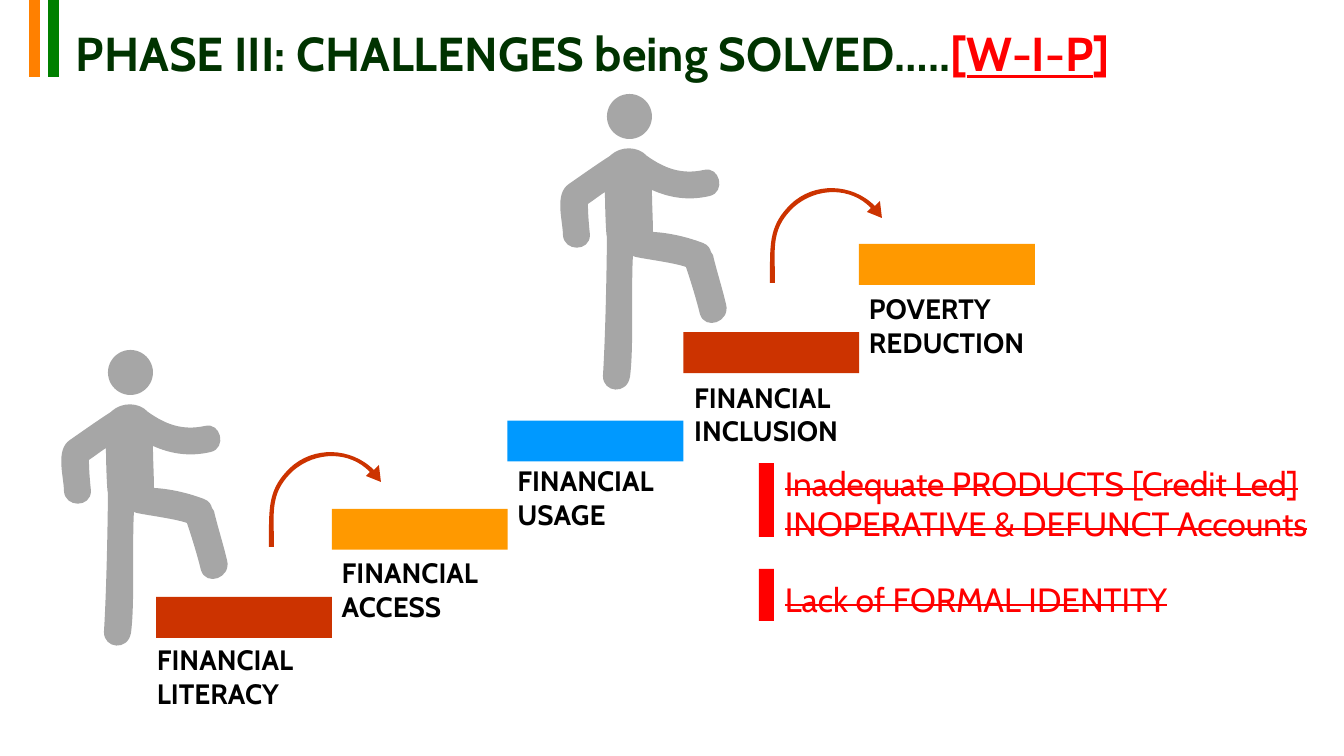
from dataclasses import dataclass

from lxml import etree
from pptx import Presentation
from pptx.dml.color import RGBColor
from pptx.enum.shapes import MSO_SHAPE
from pptx.enum.text import MSO_ANCHOR, MSO_AUTO_SIZE
from pptx.oxml.ns import qn
from pptx.util import Pt

PX = 914400 / 100.8
RECTANGLE, OVAL = MSO_SHAPE.RECTANGLE, MSO_SHAPE.OVAL
MIDDLE = MSO_ANCHOR.MIDDLE
FIT_SHAPE = MSO_AUTO_SIZE.SHAPE_TO_FIT_TEXT


@dataclass(frozen=True)
class Theme:
    font: str = "Cabin"
    title_size: int = 34
    barrier_size: int = 24
    label_size: int = 20
    title: str = "003300"
    label: str = "000000"
    alert: str = "FF0000"
    saffron: str = "FF8000"
    green: str = "008000"
    brick: str = "CC3300"
    amber: str = "FF9900"
    blue: str = "0099FF"
    walker: str = "A6A6A6"


THEME = Theme()

STEP_SIZE = (176, 41)
# label, colour, label offset from the bottom left of the step
STEPS = [
    ("FINANCIAL LITERACY", THEME.brick, -9, 0),
    ("FINANCIAL ACCESS", THEME.amber, 0, 1),
    ("FINANCIAL USAGE", THEME.blue, 0, -3),
    ("FINANCIAL INCLUSION", THEME.brick, 1, 2),
    ("POVERTY REDUCTION", THEME.amber, 0, 2),
]

# Outlines: two numbers are a line end, six are a cubic curve
WALKER_BODY = [
    (71, 290),
    (75, 261, 72, 202, 74, 169),
    (76, 171, 113, 175, 127, 180),
    (132, 195, 137, 211, 141, 227),
    (146, 244, 172, 235, 167, 217),
    (163, 200, 158, 185, 154, 168),
    (153, 167, 153, 166, 152, 165),
    (151, 161, 149, 158, 144, 156),
    (128, 150, 111, 146, 94, 145),
    (94, 131, 93, 117, 93, 103),
    (111, 111, 130, 114, 151, 109),
    (167, 105, 161, 79, 145, 83),
    (122, 88, 105, 81, 88, 69),
    (79, 59, 62, 59, 52, 68),
    (52, 68, 52, 69, 51, 69),
    (37, 78, 23, 88, 10, 97),
    (-5, 107, 4, 134, 4, 148),
    (5, 165, 31, 165, 31, 148),
    (30, 138, 29, 127, 29, 117),
    (35, 113, 40, 109, 46, 105),
    (46, 118, 47, 149, 48, 150),
    (48, 160, 47, 241, 44, 289),
    (44, 306, 68, 308, 71, 290),
]
LEAP_ARROW = [
    (112, 36),
    (110, 19),
    (105, 24),
    (82, 1, 44, 0, 21, 22),
    (0, 42, 0, 60, 0, 90),
    (0, 101),
    (5, 101),
    (5, 90),
    (4, 60, 4, 44, 24, 25),
    (47, 5, 81, 5, 101, 26),
    (97, 30),
]


def emu(*lengths):
    return [round(length * PX) for length in lengths]


def paint(shape, color):
    shape.shadow.inherit = False
    shape.fill.solid()
    shape.fill.fore_color.rgb = RGBColor.from_string(color)
    shape.line.fill.background()


def add_block(shapes, box, color, kind=RECTANGLE):
    paint(shapes.add_shape(kind, *emu(*box)), color)


def add_outline(shapes, left, top, outline, color):
    points = [
        emu(left + x, top + y)
        for segment in outline
        for x, y in zip(segment[::2], segment[1::2])
    ]
    builder = shapes.build_freeform(*points[0], scale=1.0)
    builder.add_line_segments(points[1:], close=True)
    shape = builder.convert_to_shape()
    # Join each three points of a curve into one cubic segment
    lines = iter(list(shape._element.iter(qn("a:lnTo"))))
    for segment in outline[1:]:
        line = next(lines)
        if len(segment) == 6:
            curve = etree.Element(qn("a:cubicBezTo"))
            line.addprevious(curve)
            for part in (line, next(lines), next(lines)):
                curve.append(part[0])
                part.getparent().remove(part)
    paint(shape, color)


def add_text(page, box, paragraphs, size, frame_values, spacing=None, strike=False):
    """Each paragraph is a list of (text, colour, font values)."""
    frame = page.shapes.add_textbox(*emu(*box)).text_frame
    for name, value in {"word_wrap": True, **frame_values}.items():
        setattr(frame, name, value)
    for index, spans in enumerate(paragraphs):
        para = frame.paragraphs[0] if index == 0 else frame.add_paragraph()
        para.line_spacing = spacing
        for text, color, values in spans:
            span = para.add_run()
            span.text = text
            span.font.color.rgb = RGBColor.from_string(color)
            for name, value in {"name": THEME.font, "size": Pt(size), **values}.items():
                setattr(span.font, name, value)
            if strike:
                span.font._element.set("strike", "sngStrike")


def add_header(page, left, top, width, height):
    # Flag stripes
    for offset, color in ((0, THEME.saffron), (19, THEME.green)):
        add_block(page.shapes, (left + offset, top, 11, height), color)
    # Title
    bold = {"bold": True}
    spans = [
        ("PHASE III: CHALLENGES being SOLVED…..", THEME.title, bold),
        ("[", THEME.alert, bold),
        ("W-I-P", THEME.alert, {"bold": True, "underline": True}),
        ("]", THEME.alert, bold),
    ]
    box = (left + 37, top + 29, width - 37, 55)
    add_text(page, box, [spans], THEME.title_size, {"vertical_anchor": MIDDLE}, 0.9)


def add_staircase(page, left, top, run, rise):
    """Climb evenly from the lowest step at left, top over run and rise."""
    width, height = STEP_SIZE
    gaps = len(STEPS) - 1
    for index, (label, color, shift_x, shift_y) in enumerate(STEPS):
        x, y = left + index * run / gaps, top - index * rise / gaps
        add_block(page.shapes, (x, y, width, height), color)
        box = (x + shift_x, y + height + shift_y, 215, 78)
        spans = [(label, THEME.label, {"bold": True})]
        add_text(page, box, [spans], THEME.label_size, {"auto_size": FIT_SHAPE})


def add_walker(page, left, top):
    shapes = page.shapes.add_group_shape().shapes
    add_block(shapes, (left + 48, top + 7, 45, 45), THEME.walker, OVAL)
    add_outline(shapes, left, top, WALKER_BODY, THEME.walker)


def add_barrier(page, left, top, width, height, lines, text_offset):
    add_block(page.shapes, (left, top, 15, height), THEME.alert)
    paragraphs = [[(line, THEME.alert, {})] for line in lines]
    box = (left + 16, top + text_offset, width - 16, 9 + 41 * len(lines))
    frame_values = {"auto_size": FIT_SHAPE}
    add_text(page, box, paragraphs, THEME.barrier_size, frame_values, strike=True)


def main():
    deck = Presentation()
    deck.slide_width, deck.slide_height = emu(1344, 756)
    page = deck.slides.add_slide(deck.slide_layouts[6])

    add_header(page, 29, 0, 1315, 77)
    add_staircase(page, 156, 597, 703, 353)

    # Climbers and their leaps
    for left, top in ((60, 343), (559, 87)):
        add_walker(page, left, top)
    for left, top in ((269, 446), (770, 182)):
        add_outline(page.shapes, left, top, LEAP_ARROW, THEME.brick)

    # Barriers being removed
    products = ["Inadequate PRODUCTS [Credit Led]", "INOPERATIVE & DEFUNCT Accounts"]
    add_barrier(page, 759, 463, 585, 74, products, -5)
    add_barrier(page, 759, 569, 448, 52, ["Lack of FORMAL IDENTITY"], 5)

    deck.save("out.pptx")


if __name__ == "__main__":
    main()
